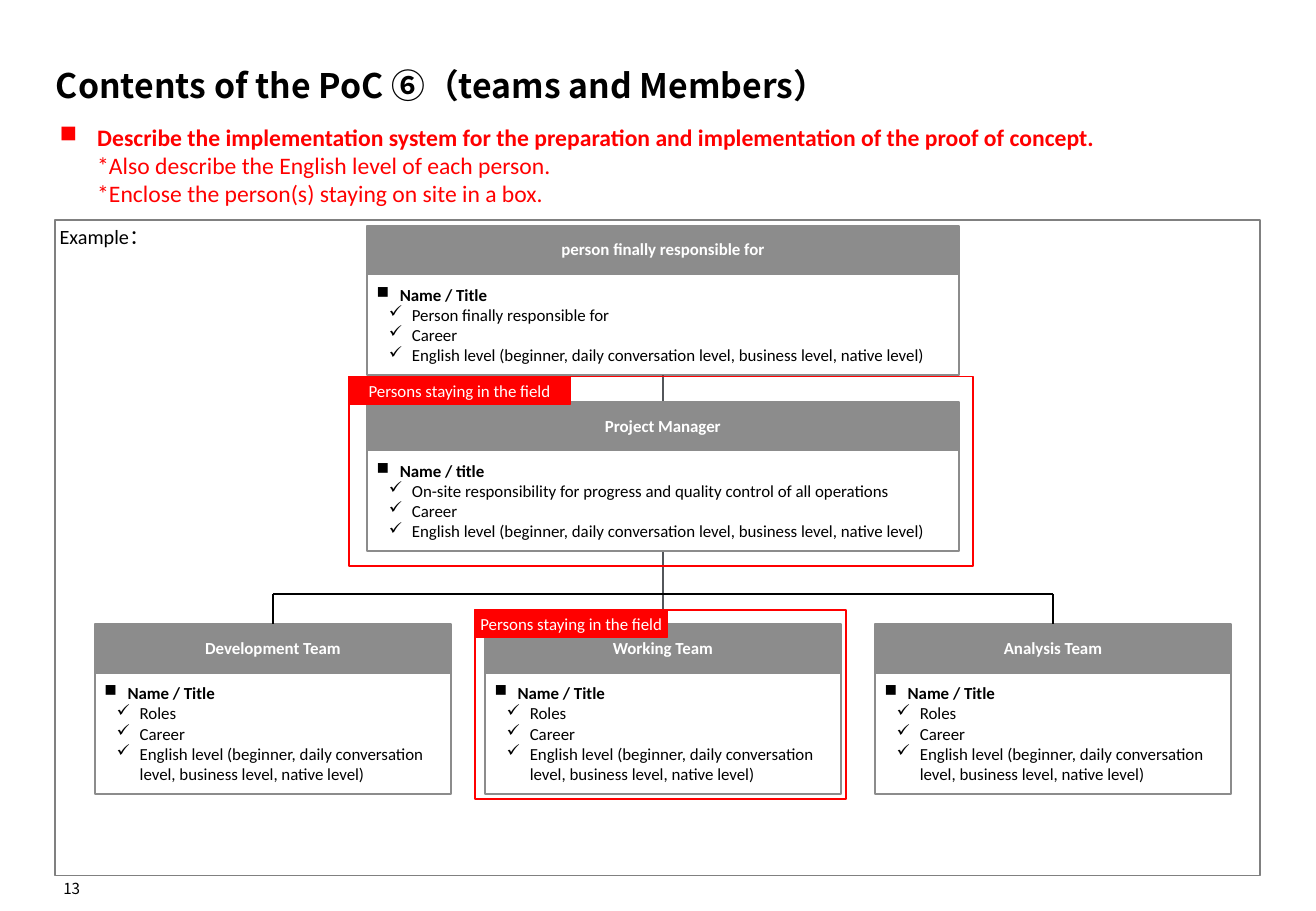
from dataclasses import dataclass

from lxml.etree import SubElement
from pptx import Presentation
from pptx.dml.color import RGBColor
from pptx.enum.shapes import MSO_CONNECTOR, MSO_SHAPE
from pptx.enum.text import MSO_ANCHOR, MSO_AUTO_SIZE, PP_ALIGN
from pptx.oxml.ns import qn
from pptx.util import Inches, Pt


@dataclass(frozen=True)
class Theme:
    latin: str = "Calibri"
    asian: str = "Noto Sans CJK JP"
    black: str = "000000"
    white: str = "FFFFFF"
    red: str = "FF0000"
    gray: str = "8C8C8C"
    border: str = "808080"
    trunk: str = "53565A"
    title: float = 20
    intro: float = 14
    example: float = 12
    body: float = 10
    number: float = 9


THEME = Theme()


@dataclass(frozen=True)
class Area:
    left: float
    top: float
    width: float
    height: float


@dataclass(frozen=True)
class Style:
    size: float
    color: str = THEME.black
    bold: bool = False
    font: str = THEME.latin


@dataclass(frozen=True)
class Card:
    heading: str
    name: str
    details: tuple[str, ...]
    left: float
    top: float
    width: float
    body_height: float


@dataclass(frozen=True)
class FieldFrame:
    area: Area
    tag_width: float


HEADER_HEIGHT = 0.4
TAG_HEIGHT = 0.23
TAG_TEXT = "Persons staying in the field"
ENGLISH = "English level (beginner, daily conversation level, business level, native level)"
LEAD_SIZE = {"left": 3.02, "width": 4.87, "body_height": 0.83}
TEAM_LEFT, TEAM_TOP, TEAM_STEP = 0.78, 5.14, 3.21
RAIL_TOP = 4.89

RESPONSIBLE = Card("person finally responsible for", "Name / Title",
                   ("Person finally responsible for", "Career", ENGLISH), top=1.86, **LEAD_SIZE)
MANAGER = Card("Project Manager", "Name / title",
               ("On-site responsibility for progress and quality control of all operations",
                "Career", ENGLISH), top=3.31, **LEAD_SIZE)
TEAMS = [
    Card(heading, "Name / Title", ("Roles", "Career", ENGLISH),
         TEAM_LEFT + index * TEAM_STEP, TEAM_TOP, 2.93, 1)
    for index, heading in enumerate(("Development Team", "Working Team", "Analysis Team"))
]
FIELD_FRAMES = [
    FieldFrame(Area(3.91, 5.02, 3.05, 1.56), 1.58),
    FieldFrame(Area(2.87, 3.1, 5.14, 1.56), 1.82),
]


def set_frame(box, inset: float = 0, **formats) -> None:
    """Apply margins and text frame formats."""
    margins = {f"margin_{side}": Inches(inset) for side in ("left", "top", "right", "bottom")}
    for name, value in {"word_wrap": True, **margins, **formats}.items():
        setattr(box.text_frame, name, value)


def add_span(para, text: str, style: Style) -> None:
    span = para.add_run()
    span.text = text
    formats = {"name": style.font, "size": Pt(style.size), "bold": style.bold}
    for name, value in formats.items():
        setattr(span.font, name, value)
    span.font.color.rgb = RGBColor.from_string(style.color)
    SubElement(span.font._element, qn("a:ea"), typeface=THEME.asian)


def add_bullet(para, symbol: str, margin: float, hanging: float) -> None:
    properties = para._p.get_or_add_pPr()
    properties.set("marL", str(Inches(margin)))
    properties.set("indent", str(-Inches(hanging)))
    SubElement(properties, qn("a:buChar"), char=symbol)


def add_rectangle(page, area: Area, line: str, fill: str | None = None):
    box = page.shapes.add_shape(MSO_SHAPE.RECTANGLE, Inches(area.left), Inches(area.top),
                                Inches(area.width), Inches(area.height))
    box.shadow.inherit = False
    if fill:
        box.fill.solid()
        box.fill.fore_color.rgb = RGBColor.from_string(fill)
    else:
        box.fill.background()
    box.line.color.rgb = RGBColor.from_string(line)
    box.line.width = Pt(1)
    return box


def add_text(page, area: Area, text: str, style: Style, align: PP_ALIGN, **formats) -> None:
    box = page.shapes.add_textbox(Inches(area.left), Inches(area.top),
                                  Inches(area.width), Inches(area.height))
    set_frame(box, **formats)
    para = box.text_frame.paragraphs[0]
    para.alignment = align
    add_span(para, text, style)


def add_line(page, start: tuple[float, float], end: tuple[float, float], color: str):
    line = page.shapes.add_connector(MSO_CONNECTOR.STRAIGHT,
                                     *(Inches(value) for value in (*start, *end)))
    line.line.color.rgb = RGBColor.from_string(color)
    line.line.width = Pt(1)
    SubElement(line._element.spPr, qn("a:effectLst"))
    return line


def add_card(page, card: Card):
    """Draw a heading over its list and return both boxes."""
    body = add_rectangle(page, Area(card.left, card.top + HEADER_HEIGHT, card.width,
                                    card.body_height), THEME.gray, THEME.white)
    set_frame(body, 0.08, vertical_anchor=MSO_ANCHOR.TOP,
              auto_size=MSO_AUTO_SIZE.SHAPE_TO_FIT_TEXT)
    for index, text in enumerate((card.name, *card.details)):
        para = body.text_frame.add_paragraph() if index else body.text_frame.paragraphs[0]
        para.alignment = PP_ALIGN.LEFT
        add_bullet(para, "✓" if index else "■", 0.29 if index else 0.19, 0.19)
        add_span(para, text, Style(THEME.body, bold=index == 0))
    header = add_rectangle(page, Area(card.left, card.top, card.width, HEADER_HEIGHT),
                           THEME.gray, THEME.gray)
    set_frame(header, 0.08, vertical_anchor=MSO_ANCHOR.MIDDLE, word_wrap=False)
    para = header.text_frame.paragraphs[0]
    para.alignment = PP_ALIGN.CENTER
    para.line_spacing = 0.95
    add_span(para, card.heading, Style(THEME.body, THEME.white, True))
    return header, body


def add_field_frame(page, frame: FieldFrame) -> None:
    add_rectangle(page, frame.area, THEME.red)
    tag = add_rectangle(page, Area(frame.area.left, frame.area.top, frame.tag_width, TAG_HEIGHT),
                        THEME.red, THEME.red)
    set_frame(tag, vertical_anchor=MSO_ANCHOR.MIDDLE)
    tag.text_frame.paragraphs[0].alignment = PP_ALIGN.CENTER
    add_span(tag.text_frame.paragraphs[0], TAG_TEXT, Style(THEME.body, THEME.white))


def add_intro(page) -> None:
    box = page.shapes.add_textbox(Inches(0.45), Inches(1.11), Inches(9.92), Inches(0.5))
    set_frame(box, 0.04, vertical_anchor=MSO_ANCHOR.MIDDLE)
    para = box.text_frame.paragraphs[0]
    add_bullet(para, "■", 0.31, 0.31)
    add_span(para, "Describe the implementation system for the preparation and implementation "
                   "of the proof of concept.", Style(THEME.intro, THEME.red, True))
    for note in ("*Also describe the English level of each person.",
                 "*Enclose the person(s) staying on site in a box."):
        para.add_line_break()
        add_span(para, note, Style(THEME.intro, THEME.red))


def main() -> None:
    deck = Presentation()
    deck.slide_width, deck.slide_height = Inches(10.83), Inches(7.5)
    page = deck.slides.add_slide(deck.slide_layouts[6])

    # Title, instructions and page number
    add_text(page, Area(0.46, 0.2, 9.92, 0.67), "Contents of the PoC ⑥（teams and Members）",
             Style(THEME.title, bold=True, font=THEME.asian), PP_ALIGN.LEFT,
             vertical_anchor=MSO_ANCHOR.BOTTOM)
    add_intro(page)
    add_text(page, Area(0.46, 7.2, 0.2, 0.19), "13", Style(THEME.number, font=THEME.asian),
             PP_ALIGN.RIGHT, vertical_anchor=MSO_ANCHOR.BOTTOM, word_wrap=False)

    # Example area
    example = add_rectangle(page, Area(0.45, 1.81, 9.92, 5.4), THEME.border)
    set_frame(example, 0.04, vertical_anchor=MSO_ANCHOR.TOP)
    example.text_frame.paragraphs[0].alignment = PP_ALIGN.LEFT
    add_span(example.text_frame.paragraphs[0], "Example：", Style(THEME.example))

    # Trunk from the responsible person to the middle team, behind the manager
    _, responsible_body = add_card(page, RESPONSIBLE)
    team_headers = [add_card(page, team)[0] for team in TEAMS]
    trunk = add_line(page, (5.46, 3.09), (5.46, TEAM_TOP), THEME.trunk)
    trunk.begin_connect(responsible_body, 2)
    trunk.end_connect(team_headers[1], 0)
    add_card(page, MANAGER)

    # Rail and drops to the outer teams
    centers = [team.left + team.width / 2 for team in TEAMS]
    add_line(page, (centers[0], RAIL_TOP), (centers[2], RAIL_TOP), THEME.black)
    for index in (0, 2):
        drop = add_line(page, (centers[index], RAIL_TOP), (centers[index], TEAM_TOP), THEME.black)
        drop.end_connect(team_headers[index], 0)

    # Frames around the people on site
    for frame in FIELD_FRAMES:
        add_field_frame(page, frame)

    deck.save("out.pptx")


if __name__ == "__main__":
    main()
